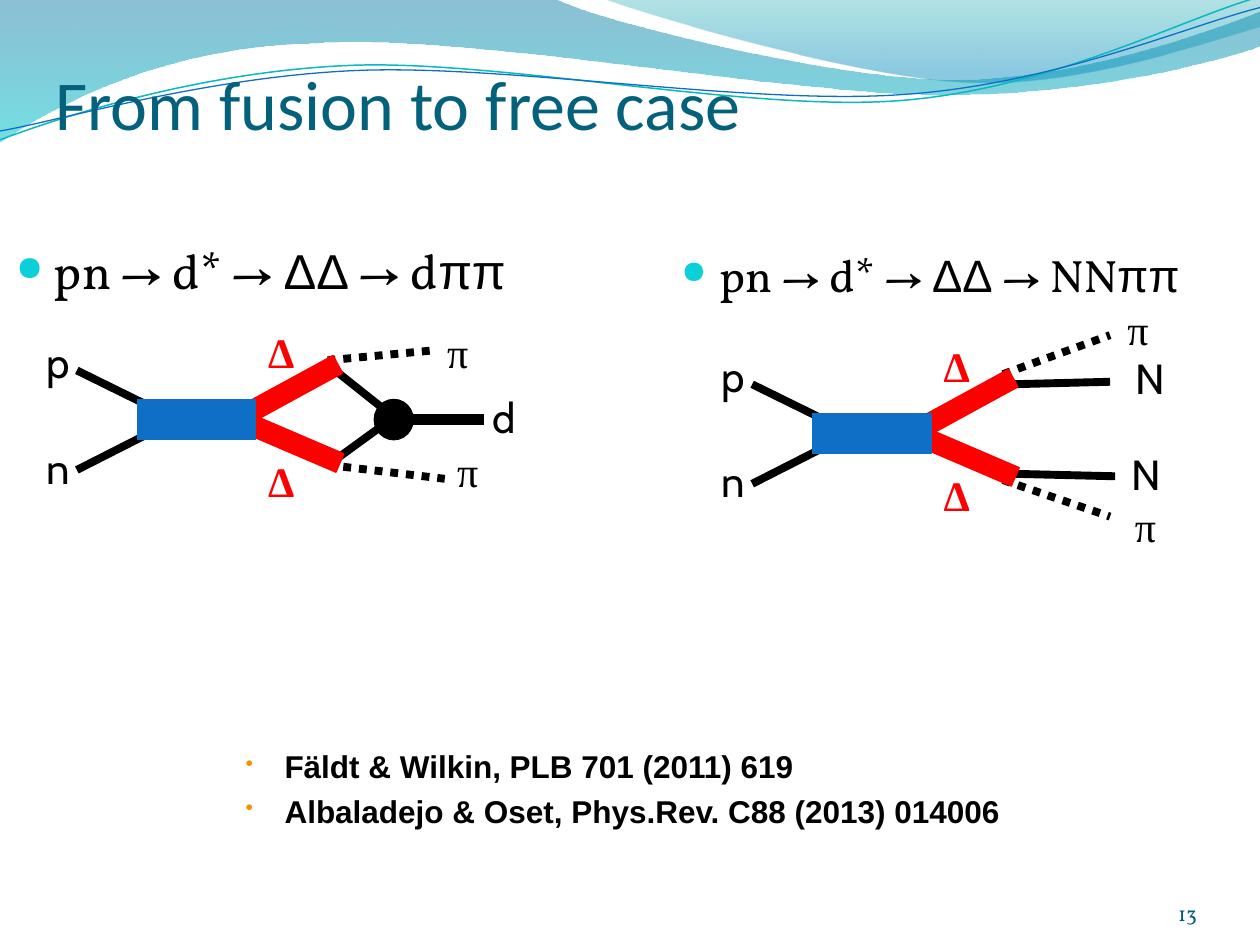
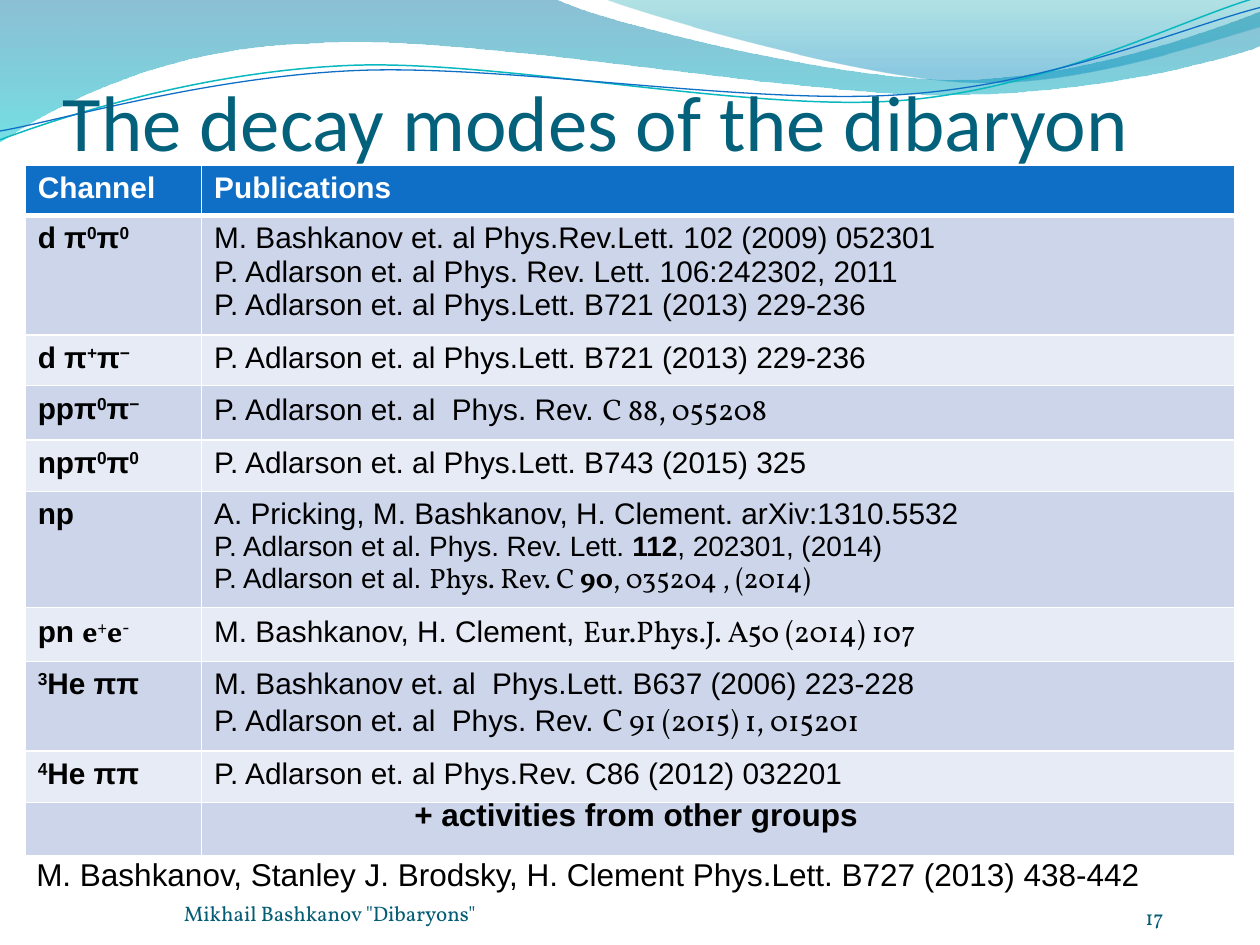
"""Builds two slides on the dibaryon: its reaction diagrams and its decay modes."""
from lxml.etree import SubElement as add_child
from pptx import Presentation
from pptx.dml.color import RGBColor
from pptx.enum.dml import MSO_LINE as Dash
from pptx.enum.shapes import MSO_CONNECTOR as Link, MSO_SHAPE as Preset
from pptx.enum.text import MSO_ANCHOR as Anchor, PP_ALIGN as Align
from pptx.oxml.ns import qn
from pptx.util import Inches, Pt

rgb = RGBColor.from_string
BLACK, WHITE, RED, BLUE = "000000", "FFFFFF", "FF0000", "0F6FC6"
TITLE_COLOR, FOOTER_COLOR = "04617B", "045D75"
SERIF, SANS = {"name": "Vollkorn"}, {"name": "Arial"}
BOLD, SUP = {"bold": True}, {"baseline": 30000}
TITLE = {"name": "Calibri", "color": TITLE_COLOR}
FOOTER = {"name": "Vollkorn", "size": Pt(12), "color": FOOTER_COLOR}


def write(frame, paragraphs, style, align=Align.LEFT, bullet=None):
    """Fill a text frame with paragraphs of runs; a run is a string or (string, style)."""
    for index, runs in enumerate(paragraphs):
        para = frame.paragraphs[0] if index == 0 else frame.add_paragraph()
        para.alignment = align
        if bullet:
            mark, color, percent, indent = bullet
            para.space_before = Pt(4)
            props = para._p.get_or_add_pPr()
            props.set("marL", str(Inches(indent)))
            props.set("indent", str(-Inches(indent)))
            add_child(add_child(props, qn("a:buClr")), qn("a:srgbClr"), val=color)
            add_child(props, qn("a:buSzPct"), val=str(percent * 1000))
            add_child(props, qn("a:buChar"), char=mark)
        for run in runs:
            text, extra = (run, {}) if isinstance(run, str) else run
            look = {"color": BLACK, **style, **extra}
            span = para.add_run()
            span.text = text
            span.font.color.rgb = rgb(look.pop("color"))
            for name, value in look.items():
                if name in ("baseline", "kern"):
                    span._r.get_or_add_rPr().set(name, str(value))
                else:
                    setattr(span.font, name, value)


def add_text(page, place, paragraphs, style, anchor=Anchor.TOP, margins=None, **layout):
    """Add a wrapping text box at (left, top, width, height) in inches."""
    frame = page.shapes.add_textbox(*map(Inches, place)).text_frame
    settings = {"word_wrap": True, "vertical_anchor": anchor}
    if margins:
        sides = ("margin_left", "margin_top", "margin_right", "margin_bottom")
        settings.update(zip(sides, map(Inches, margins)))
    for name, value in settings.items():
        setattr(frame, name, value)
    write(frame, paragraphs, style, **layout)


deck = Presentation()
deck.slide_width, deck.slide_height = Inches(10), Inches(7.5)

waves = [
    {"start": (0, 0), "stops": [(0, "0074A1", 45), (1, "00C6CF", 55)], "steps": [
        (4.4, -0.01), (4.76, 0.17, 6.64, 0.63, 7.58, 0.63),
        (8.53, 0.63, 9.58, 0.26, 10, 0.09), (10.01, 0.36),
        (9.83, 0.44, 8.7, 0.76, 7.46, 0.75), (6.22, 0.75, 3.82, 0.28, 2.57, 0.34),
        (1.29, 0.36, 0.46, 0.83, -0.01, 1.13), (0, 0)]},
    {"start": (4.79, -0.01), "stops": [(0, "00A1A9", 30), (0.8, "008BBF", 45)], "steps": [
        (5.09, 0.11, 6.82, 0.62, 7.69, 0.65), (8.56, 0.69, 9.61, 0.32, 10, 0.21),
        (10, 0), (4.79, -0.01)]},
    {"start": (0, 1.11), "line": ("0AB8BF", 0.85), "steps": [
        (0.48, 0.93, 1.58, 0.57, 2.77, 0.52), (3.95, 0.47, 5.93, 0.89, 7.13, 0.8),
        (8.33, 0.71, 9.38, 0.15, 9.98, -0.02)]},
    {"start": (0, 1.04), "line": (BLUE, 0.75), "steps": [
        (0.47, 0.96, 1.64, 0.61, 2.83, 0.56), (4.03, 0.51, 5.97, 0.84, 7.17, 0.75),
        (8.36, 0.67, 9.41, 0.21, 10, 0.06)]},
]
headings = [
    ("From fusion to free case", (0.44, 0.21, 9, 0.94), 40,
     "13", (8.67, 6.95, 0.83, 0.4), Align.RIGHT),
    ("The decay modes of the dibaryon", (0.5, 0.08, 9, 1.25), 45,
     "17", (9.09, 6.98, 0.64, 0.4), Align.LEFT),
]

pages = []
for title, title_place, size, number, number_place, align in headings:
    page = deck.slides.add_slide(deck.slide_layouts[6])
    pages.append(page)
    for wave in waves:
        points = [(Inches(x), Inches(y)) for step in wave["steps"]
                  for x, y in zip(step[::2], step[1::2])]
        builder = page.shapes.build_freeform(*map(Inches, wave["start"]))
        builder.add_line_segments(points, close="stops" in wave)
        shape = builder.convert_to_shape()
        segments = iter(list(shape._element.iter(qn("a:lnTo"))))
        for step in wave["steps"]:
            first = next(segments)
            if len(step) == 6:
                curve = first.makeelement(qn("a:cubicBezTo"))
                first.addprevious(curve)
                for segment in (first, next(segments), next(segments)):
                    curve.append(segment[0])
                    segment.getparent().remove(segment)
        shape.shadow.inherit = False
        if "stops" in wave:
            shape.line.fill.background()
            shape.fill.gradient()
            shape.fill.gradient_angle = 270
            for stop, (position, color, _) in zip(shape.fill.gradient_stops, wave["stops"]):
                stop.position = position
                stop.color.rgb = rgb(color)
            tints = shape._element.spPr.iter(qn("a:srgbClr"))
            for tint, (_, _, opacity) in zip(list(tints), wave["stops"]):
                add_child(tint, qn("a:alpha"), val=str(opacity * 1000))
        else:
            color, width = wave["line"]
            shape.fill.background()
            shape.line.color.rgb = rgb(color)
            shape.line.width = Pt(width)
    add_text(page, number_place, [[number]], FOOTER, Anchor.BOTTOM, (0, 0, 0, 0), align=align)
    add_text(page, title_place, [[title]], {**TITLE, "size": Pt(size)},
             Anchor.BOTTOM, (0, 0.05, 0, 0))

reactions, decays = pages

for place, size, product in [((0.03, 1.86, 4.38, 0.63), 28, "d"),
                             ((5.31, 1.91, 4.38, 0.63), 25.9, "NN")]:
    formula = ["pn → d* → ", ("ΔΔ", SANS), f" → {product}", ("ππ", SANS)]
    add_text(reactions, place, [formula], {**SERIF, "size": Pt(size), "kern": 1200},
             bullet=("●", "0BD0D9", 70, 0.3))

PARTICLE = {"name": "Cabin", "size": Pt(24)}
PION = {"name": "Times New Roman", "size": Pt(24)}
DELTA = {**PION, "bold": True, "color": RED}
incoming = [(0.61, 2.94, 1.24, 3.25), (0.61, 3.73, 1.24, 3.41)]
blocks = [
    (Preset.RECTANGLE, (1.94, 3, 0.79, 0.16), -28.6, RED),
    (Preset.RECTANGLE, (1.94, 3.44, 0.79, 0.16), 23.2, RED),
    (Preset.RECTANGLE, (1.09, 3.17, 0.94, 0.32), 0, BLUE),
]
common_labels = [("Δ", 2.03, 3.57, 0.41, DELTA), ("Δ", 2.03, 2.54, 0.41, DELTA),
                 ("p", 0.27, 2.62, 0.32, PARTICLE), ("n", 0.27, 3.46, 0.32, PARTICLE)]
diagrams = [
    {"shift": (0, 0),
     "pions": [(2.6, 3.69, 3.53, 3.8), (2.6, 2.86, 3.45, 2.78)],
     "nucleons": [(2.66, 2.94, 3.05, 3.25), (2.66, 3.65, 3.21, 3.25)],
     "deuteron": [(3.21, 3.33, 3.84, 3.33)],
     "vertex": [(Preset.OVAL, (2.97, 3.17, 0.31, 0.32), 0, BLACK)],
     "labels": [("d", 3.81, 3.06, 0.32, PARTICLE),
                ("π", 3.53, 3.49, 0.37, PION), ("π", 3.45, 2.54, 0.37, PION)]},
    {"shift": (5.36, 0.11),
     "pions": [(2.6, 3.7, 3.45, 3.99), (2.6, 2.86, 3.45, 2.55)],
     "nucleons": [(2.66, 2.94, 3.45, 2.92), (2.66, 3.65, 3.49, 3.67)],
     "deuteron": [],
     "vertex": [],
     "labels": [("π", 3.55, 3.81, 0.37, PION), ("π", 3.49, 2.25, 0.37, PION),
                ("N", 3.52, 3.4, 0.32, PARTICLE), ("N", 3.55, 2.64, 0.32, PARTICLE)]},
]

for diagram in diagrams:
    dx, dy = diagram["shift"]
    strokes = [(diagram["pions"], 4.5, Dash.ROUND_DOT),
               (diagram["nucleons"] + incoming, 4.5, Dash.SOLID),
               (diagram["deuteron"], 6, Dash.SOLID)]
    for lines, width, dash in strokes:
        for x1, y1, x2, y2 in lines:
            ends = map(Inches, (x1 + dx, y1 + dy, x2 + dx, y2 + dy))
            link = reactions.shapes.add_connector(Link.STRAIGHT, *ends)
            link.line.color.rgb = rgb(BLACK)
            link.line.width = Pt(width)
            link.line.dash_style = dash
            add_child(link._element.spPr, qn("a:effectLst"))
    for preset, (left, top, width, height), turn, color in blocks + diagram["vertex"]:
        place = map(Inches, (left + dx, top + dy, width, height))
        shape = reactions.shapes.add_shape(preset, *place)
        shape.rotation = turn
        shape.shadow.inherit = False
        shape.fill.solid()
        shape.fill.fore_color.rgb = rgb(color)
        shape.line.color.rgb = rgb(color)
        shape.line.width = Pt(0.75)
    for text, left, top, width, style in common_labels + diagram["labels"]:
        add_text(reactions, (left + dx, top + dy, width, 0.5), [[text]], style)

references = [["Fäldt & Wilkin, PLB 701 (2011) 619"],
              ["Albaladejo & Oset, Phys.Rev. C88 (2013) 014006"]]
add_text(reactions, (1.85, 5.88, 6.38, 1.07), references,
         {**SANS, **BOLD, "size": Pt(18)}, bullet=("•", "F49100", 70, 0.31))

SMALL = {"size": Pt(16)}
SMALL_SERIF = {**SERIF, **SMALL}
channels = [
    (0.4, ["Channel"], [["Publications"]]),
    (0.9, ["d π", ("0", SUP), "π", ("0", SUP)],
     [["M. Bashkanov et. al Phys.Rev.Lett. 102 (2009) 052301"],
      ["P. Adlarson et. al Phys. Rev. Lett. 106:242302, 2011"],
      ["P. Adlarson et. al Phys.Lett. B721 (2013) 229-236"]]),
    (0.4, ["d π", ("+", SUP), "π", ("−", SUP)],
     [["P. Adlarson et. al Phys.Lett. B721 (2013) 229-236"]]),
    (0.43, ["ppπ", ("0", SUP), "π", ("−", SUP)],
     [["P. Adlarson et. al  Phys. Rev. ", ("C 88, 055208", SERIF)]]),
    (0.41, ["npπ", ("0", SUP), "π", ("0", SUP)],
     [["P. Adlarson et. al Phys.Lett. B743 (2015) 325"]]),
    (0.92, ["np"],
     [["A. Pricking, M. Bashkanov, H. Clement. arXiv:1310.5532"],
      [("P. Adlarson et al. Phys. Rev. Lett. ", SMALL), ("112", {**SMALL, **BOLD}),
       (", 202301, (2014)", SMALL)],
      [("P. Adlarson et al. ", SMALL), ("Phys. Rev. C ", SMALL_SERIF),
       ("90", {**SMALL_SERIF, **BOLD}), (", 035204 , (2014)", SMALL_SERIF)]]),
    (0.43, ["pn ", ("e", SERIF), ("+", {**SERIF, **SUP}), ("e", SERIF),
            ("-", {**SERIF, **SUP})],
     [["M. Bashkanov, H. Clement, ", ("Eur.Phys.J. A50 (2014) 107", SERIF)]]),
    (0.71, [("3", SUP), "He ππ"],
     [["M. Bashkanov et. al  Phys.Lett. B637 (2006) 223-228"],
      ["P. Adlarson et. al  Phys. Rev. ", ("C", {**SERIF, "size": Pt(18)}),
       (" 91 (2015) 1, 015201", SERIF)]]),
    (0.41, [("4", SUP), "He ππ"], [["P. Adlarson et. al Phys.Rev. C86 (2012) 032201"]]),
    (0.42, [], []),
]
place = map(Inches, (0.2, 1.31, 9.6, sum(height for height, _, _ in channels)))
table = decays.shapes.add_table(len(channels), 2, *place).table
for column, width in zip(table.columns, (1.4, 8.2)):
    column.width = Inches(width)
for index, (height, channel, papers) in enumerate(channels):
    table.rows[index].height = Inches(height)
    header = index == 0
    band = BLUE if header else ("E7EBF5", "CCD5EA")[index % 2]
    for column, paragraphs in enumerate(([channel] if channel else [], papers)):
        cell = table.cell(index, column)
        props = cell._tc.get_or_add_tcPr()
        for side in "LRTB":
            thick = (header and side == "B") or (index == 1 and side == "T")
            edge = add_child(props, qn(f"a:ln{side}"), w=str(Pt(3 if thick else 1)))
            add_child(add_child(edge, qn("a:solidFill")), qn("a:srgbClr"), val=WHITE)
        cell.fill.solid()
        cell.fill.fore_color.rgb = rgb(band)
        write(cell.text_frame, paragraphs,
              {**SANS, "size": Pt(17), "bold": header or column == 0,
               "color": WHITE if header else BLACK})

add_text(decays, (3.19, 6.26, 3.83, 0.4), [["+ activities from other groups"]],
         {**SANS, **BOLD, "size": Pt(18)})
add_text(decays, (1.46, 6.95, 5.13, 0.4), [['Mikhail Bashkanov "Dibaryons"']], FOOTER,
         Anchor.BOTTOM, (0, 0, 0, 0))
add_text(decays, (0.19, 6.74, 9.04, 0.71),
         [["M. Bashkanov, Stanley J. Brodsky, H. Clement Phys.Lett. B727 (2013) 438-442"]],
         {**SANS, "size": Pt(18)})

deck.save("out.pptx")
